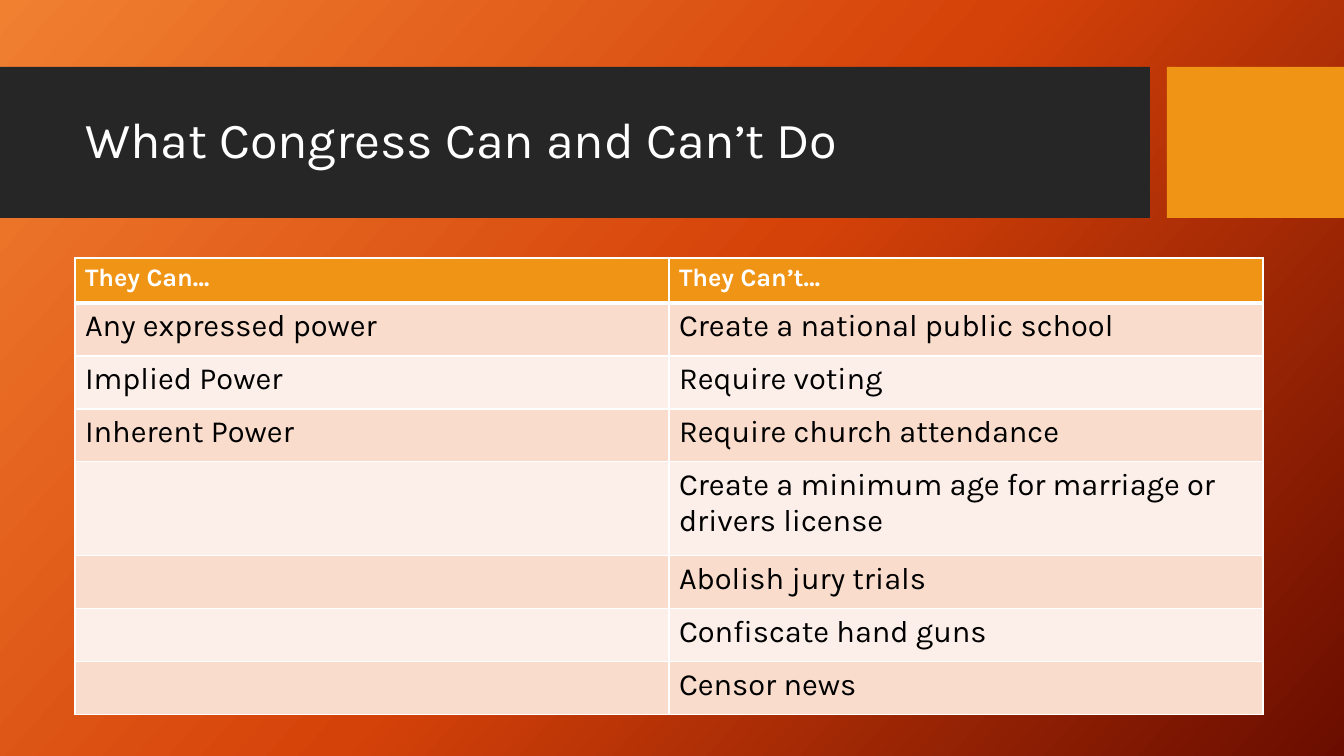
import copy

import pptx
import pptx.dml.color
import pptx.enum.shapes
import pptx.enum.text
import pptx.oxml
import pptx.oxml.ns
import pptx.util

TITLE = "What Congress Can and Can’t Do"
ROWS = [
    ("They Can…", "They Can’t…"),
    ("Any expressed power", "Create a national public school"),
    ("Implied Power", "Require voting"),
    ("Inherent Power", "Require church attendance"),
    ("", "Create a minimum age for marriage or drivers license"),
    ("", "Abolish jury trials"),
    ("", "Confiscate hand guns"),
    ("", "Censor news"),
]
ROW_HEIGHTS = [45, 53, 53, 53, 94, 53, 53, 53]
COLUMN_WIDTH = 594
TABLE_LEFT, TABLE_TOP = 75, 258
TITLE_BOX = (75, 83, 1059, 119)
BARS = [((0, 67, 1150, 151), "dark"), ((1167, 67, 177, 151), "orange")]
COLORS = {
    "dark": "262626",
    "orange": "F09415",
    "white": "FFFFFF",
    "black": "000000",
    "band": "F9DCCC",
    "pale": "FCEEE8",
}
GRADIENT = [(0, "F18031"), (0.5, "D54209"), (1, "6A0D00")]
GRADIENT_ANGLE = 42
FONT = "Karla"
EMU_PER_PX = 914400 / 100.8


def px(length):
    return pptx.util.Emu(round(length * EMU_PER_PX))


def rgb(value):
    return pptx.dml.color.RGBColor.from_string(value)


def add_run(paragraph, text, size, color, bold=False):
    run = paragraph.add_run()
    run.text = text
    run.font.name = FONT
    run.font.size = pptx.util.Pt(size)
    run.font.bold = bold
    run.font.color.rgb = rgb(COLORS[color])


def paint_background(slide):
    fill = slide.background.fill
    fill.gradient()
    fill.gradient_angle = 360 - GRADIENT_ANGLE
    stop_list = slide.element.xpath(".//a:gsLst")[0]
    stop_list.insert(1, copy.deepcopy(stop_list[0]))
    for stop, (position, color) in zip(fill.gradient_stops, GRADIENT):
        stop.position = position
        stop.color.rgb = rgb(color)


def add_bar(slide, box, color):
    shape = slide.shapes.add_shape(
        pptx.enum.shapes.MSO_SHAPE.RECTANGLE, *map(px, box))
    shape.shadow.inherit = False
    shape.fill.solid()
    shape.fill.fore_color.rgb = rgb(COLORS[color])
    shape.line.fill.background()


def place_title(slide):
    title = slide.shapes.title
    slide.shapes.element.append(title.element)
    title.left, title.top, title.width, title.height = map(px, TITLE_BOX)
    frame = title.text_frame
    frame.word_wrap = True
    frame.vertical_anchor = pptx.enum.text.MSO_ANCHOR.MIDDLE
    paragraph = frame.paragraphs[0]
    paragraph.alignment = pptx.enum.text.PP_ALIGN.LEFT
    paragraph.line_spacing = 0.9
    add_run(paragraph, TITLE, 36, "white")


def set_borders(cell, widths):
    properties = cell._tc.get_or_add_tcPr()
    for side, width in widths.items():
        properties.append(pptx.oxml.parse_xml(
            f'<a:ln{side} {pptx.oxml.ns.nsdecls("a")} w="{pptx.util.Pt(width)}">'
            f'<a:solidFill><a:srgbClr val="{COLORS["white"]}"/></a:solidFill>'
            f'</a:ln{side}>'))


def add_power_table(slide):
    columns = len(ROWS[0])
    table = slide.shapes.add_table(
        len(ROWS), columns, px(TABLE_LEFT), px(TABLE_TOP),
        px(COLUMN_WIDTH * columns), px(sum(ROW_HEIGHTS))).table
    for column in table.columns:
        column.width = px(COLUMN_WIDTH)
    for index, (texts, height) in enumerate(zip(ROWS, ROW_HEIGHTS)):
        table.rows[index].height = px(height)
        header = index == 0
        fill = "orange" if header else ("pale", "band")[index % 2]
        borders = {"L": 1, "R": 1, "T": 3 if index == 1 else 1,
                   "B": 3 if header else 1}
        for cell, text in zip(table.rows[index].cells, texts):
            set_borders(cell, borders)
            cell.fill.solid()
            cell.fill.fore_color.rgb = rgb(COLORS[fill])
            if header:
                add_run(cell.text_frame.paragraphs[0], text, 18, "white", True)
            elif text:
                add_run(cell.text_frame.paragraphs[0], text, 22, "black")


def main():
    presentation = pptx.Presentation()
    presentation.slide_width = px(1344)
    presentation.slide_height = px(756)
    slide = presentation.slides.add_slide(presentation.slide_layouts[5])
    paint_background(slide)
    for box, color in BARS:
        add_bar(slide, box, color)
    place_title(slide)
    add_power_table(slide)
    presentation.save("out.pptx")


if __name__ == "__main__":
    main()
